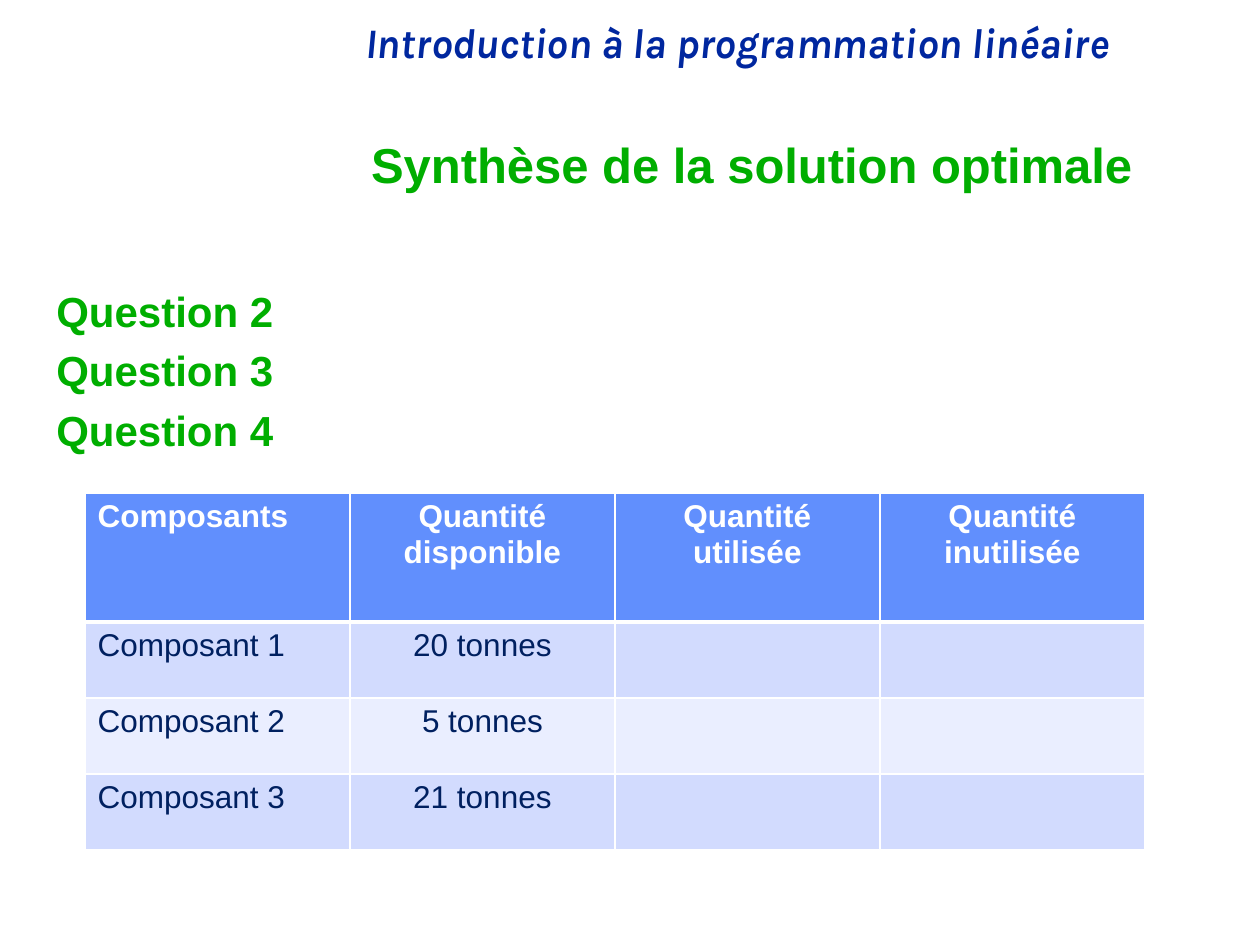
import pptx
import pptx.util
import pptx.dml.color
import pptx.enum.text
import pptx.oxml
import pptx.oxml.ns
from lxml import etree

PX = 914400 // 126
NAVY = pptx.dml.color.RGBColor(0x00, 0x27, 0x9F)
GREEN = pptx.dml.color.RGBColor(0x00, 0xAE, 0x00)
WHITE = pptx.dml.color.RGBColor(0xFF, 0xFF, 0xFF)
INK = pptx.dml.color.RGBColor(0x00, 0x20, 0x60)
HEADER_BLUE = pptx.dml.color.RGBColor(0x61, 0x8F, 0xFD)
BAND_DARK = pptx.dml.color.RGBColor(0xD2, 0xDB, 0xFE)
BAND_LIGHT = pptx.dml.color.RGBColor(0xEA, 0xEE, 0xFF)
ALIGN = pptx.enum.text.PP_ALIGN


def style(paragraph, size, color, bold=True, name="Arial"):
    paragraph.font.name = name
    paragraph.font.size = pptx.util.Pt(size)
    paragraph.font.bold = bold
    paragraph.font.color.rgb = color


def add_border(cell, side, points):
    properties = cell._tc.get_or_add_tcPr()
    line = etree.SubElement(properties, pptx.oxml.ns.qn(f"a:{side}"), w=str(pptx.util.Pt(points)))
    fill = etree.SubElement(line, pptx.oxml.ns.qn("a:solidFill"))
    etree.SubElement(fill, pptx.oxml.ns.qn("a:srgbClr"), val=str(WHITE))


presentation = pptx.Presentation()
presentation.slide_width = 1260 * PX
presentation.slide_height = 945 * PX
slide = presentation.slides.add_slide(presentation.slide_layouts[5])

course = slide.shapes.add_textbox(353 * PX, 16 * PX, 1018 * PX, 58 * PX)
course.text_frame.word_wrap = True
paragraph = course.text_frame.paragraphs[0]
paragraph.text = "Introduction à la programmation linéaire"
paragraph.line_spacing = 0.9
style(paragraph, 24, NAVY, name="Karla")
paragraph.font.italic = True

title = slide.shapes.title
title.left, title.top, title.width, title.height = 147 * PX, 136 * PX, 998 * PX, 63 * PX
title.text_frame.vertical_anchor = pptx.enum.text.MSO_ANCHOR.MIDDLE
title.text_frame.auto_size = pptx.enum.text.MSO_AUTO_SIZE.NONE
paragraph = title.text_frame.paragraphs[0]
paragraph.text = "Synthèse de la solution optimale"
paragraph.alignment = ALIGN.RIGHT
paragraph.line_spacing = 0.9
style(paragraph, 28, GREEN)

rows = [
    ["Composants", "Quantité disponible", "Quantité utilisée", "Quantité inutilisée"],
    ["Composant 1", "20 tonnes", "", ""],
    ["Composant 2", "5 tonnes", "", ""],
    ["Composant 3", "21 tonnes", "", ""],
]
row_heights = [129, 76, 76, 76]
row_fills = [HEADER_BLUE, BAND_DARK, BAND_LIGHT, BAND_DARK]
table = slide.shapes.add_table(
    4, 4, 85 * PX, 493 * PX, 1060 * PX, sum(row_heights) * PX
).table
for row_index, texts in enumerate(rows):
    table.rows[row_index].height = row_heights[row_index] * PX
    header = row_index == 0
    for column_index, text in enumerate(texts):
        cell = table.cell(row_index, column_index)
        paragraph = cell.text_frame.paragraphs[0]
        paragraph.text = text
        paragraph.alignment = ALIGN.CENTER if column_index else ALIGN.LEFT
        style(paragraph, 18, WHITE if header else INK, bold=header)
        add_border(cell, "lnL", 1)
        add_border(cell, "lnR", 1)
        add_border(cell, "lnT", 3 if row_index == 1 else 1)
        add_border(cell, "lnB", 3 if header else 1)
        cell.fill.solid()
        cell.fill.fore_color.rgb = row_fills[row_index]

questions = slide.shapes.add_textbox(44 * PX, 285 * PX, 731 * PX, 60 * PX)
frame = questions.text_frame
frame.word_wrap = True
frame.text = "\n".join(f"Question {number}" for number in (2, 3, 4))
for paragraph in frame.paragraphs:
    paragraph.line_spacing = 0.9
    paragraph.space_before = pptx.util.Pt(8)
    style(paragraph, 24, GREEN)

presentation.save("out.pptx")
